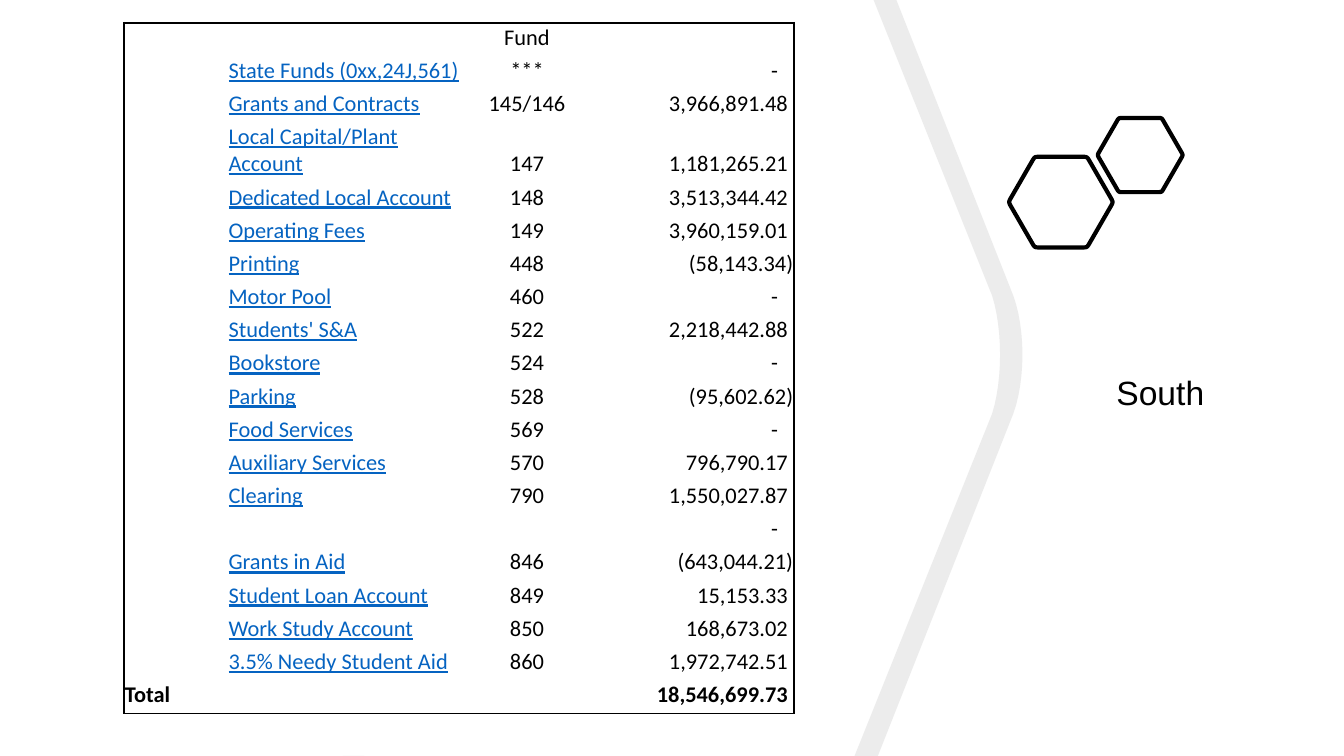
from math import cos, pi, sin

from lxml import etree
from pptx import Presentation
from pptx.dml.color import RGBColor
from pptx.enum.text import MSO_ANCHOR, PP_ALIGN
from pptx.oxml.ns import qn
from pptx.util import Cm, Pt

LEFT, CENTER, RIGHT = PP_ALIGN.LEFT, PP_ALIGN.CENTER, PP_ALIGN.RIGHT
BOTTOM = MSO_ANCHOR.BOTTOM
BLACK, LINK, GREY = "000000", "0563C1", "808080"
NO_STYLE = "{2D5ABB26-0587-4C30-8999-92F81FD0307C}"

# Content: label, fund, amount
HEADER = ("", "", "Fund", "")
FUNDS = [
    ("State Funds (0xx,24J,561)", "***", "-"),
    ("Grants and Contracts", "145/146", "3,966,891.48"),
    ("Local Capital/Plant Account", "147", "1,181,265.21"),
    ("Dedicated Local Account", "148", "3,513,344.42"),
    ("Operating Fees", "149", "3,960,159.01"),
    ("Printing", "448", "(58,143.34)"),
    ("Motor Pool", "460", "-"),
    ("Students' S&A", "522", "2,218,442.88"),
    ("Bookstore", "524", "-"),
    ("Parking", "528", "(95,602.62)"),
    ("Food Services", "569", "-"),
    ("Auxiliary Services", "570", "796,790.17"),
    ("Clearing", "790", "1,550,027.87"),
    ("", "", "-"),
    ("Grants in Aid", "846", "(643,044.21)"),
    ("Student Loan Account", "849", "15,153.33"),
    ("Work Study Account", "850", "168,673.02"),
    ("3.5% Needy Student Aid", "860", "1,972,742.51"),
]
TOTAL = ("Total", "", "", "18,546,699.73")
ROWS = [HEADER] + [("",) + fund for fund in FUNDS] + [TOTAL]
CAMPUS = "South"

# Layout in centimetres
WIDTH, HEIGHT = 25.4, 14.29
COLS = (1.96, 4.72, 1.88, 4.11)
ALIGNS = (LEFT, LEFT, CENTER, RIGHT)
ROW_H = 0.53
HEXAGONS = [(20.05, 3.82, 0.99), (21.55, 2.93, 0.81)]  # centre x, y, radius


def rgb(value):
    return RGBColor.from_string(value)


def style(p, size, name, color, bold=False, underline=False):
    f = p.font
    f.size, f.name, f.bold, f.underline = Pt(size), name, bold, underline
    f.color.rgb = rgb(color)


def bezier(p0, p1, p2, p3, steps=12):
    """Points along a cubic curve."""
    points = []
    for i in range(steps + 1):
        t = i / steps
        weights = ((1 - t) ** 3, 3 * t * (1 - t) ** 2, 3 * t * t * (1 - t), t ** 3)
        points.append(tuple(sum(w * q[k] for w, q in zip(weights, (p0, p1, p2, p3)))
                            for k in (0, 1)))
    return points


def freeform(s, *outlines):
    outlines = [[(Cm(x), Cm(y)) for x, y in points] for points in outlines]
    builder = s.shapes.build_freeform(*outlines[0][0], scale=1.0)
    for i, points in enumerate(outlines):
        if i:
            builder.move_to(*points[0])
        builder.add_line_segments(points[1:], close=True)
    sp = builder.convert_to_shape()
    sp.shadow.inherit = False
    return sp


def add_band(s):
    outer = bezier((19.15, 5.59), (19.38, 6.22), (19.38, 7.19), (19.15, 7.82))
    inner = bezier((18.75, 7.82), (18.95, 7.19), (18.95, 6.22), (18.75, 5.59))
    arrow = [(16.51, 0), (16.94, 0), *outer, (16.59, HEIGHT), (16.15, HEIGHT), *inner]
    sp = freeform(s, arrow, [(6.48, HEIGHT), (6.88, HEIGHT)])
    sp.fill.solid()
    sp.fill.fore_color.rgb = rgb(GREY)
    color = sp.fill._xPr.find(".//" + qn("a:srgbClr"))
    etree.SubElement(color, qn("a:alpha"), val="15000")
    sp.line.fill.background()


def add_hexagon(s, cx, cy, radius, cut=0.1):
    corners = [(cx + radius * cos(i * pi / 3), cy + radius * sin(i * pi / 3))
               for i in range(6)]
    points = []
    for i, corner in enumerate(corners):
        start, end = (tuple(c + cut * (n - c) for c, n in zip(corner, near))
                      for near in (corners[i - 1], corners[(i + 1) % 6]))
        points += bezier(start, corner, corner, end, 6)
    sp = freeform(s, points)
    sp.fill.background()
    sp.line.color.rgb = rgb(BLACK)
    sp.line.width = Pt(2.25)


def set_borders(cell, drawn):
    tc_pr = cell._tc.get_or_add_tcPr()
    for side in "LRTB":
        ln = etree.SubElement(tc_pr, qn("a:ln" + side), w=str(Pt(1)))
        if side in drawn:
            fill = etree.SubElement(ln, qn("a:solidFill"))
            etree.SubElement(fill, qn("a:srgbClr"), val=BLACK)
        else:
            etree.SubElement(ln, qn("a:noFill"))


def amount_inset(text):
    """Align digits left of the closing bracket, dashes further in."""
    if text == "-":
        return 0.31
    return 0.02 if text.endswith(")") else 0.12


def add_fund_table(s):
    last_row, last_col = len(ROWS) - 1, len(COLS) - 1
    frame = s.shapes.add_table(len(ROWS), len(COLS), Cm(2.34), Cm(0.43),
                               Cm(sum(COLS)), Cm(ROW_H * len(ROWS)))
    table = frame.table
    table.first_row = table.horz_banding = False
    table._tbl.tblPr.find(qn("a:tableStyleId")).text = NO_STYLE
    for column, width in zip(table.columns, COLS):
        column.width = Cm(width)
    for r, row in enumerate(ROWS):
        table.rows[r].height = Cm(ROW_H)
        for c, text in enumerate(row):
            cell = table.cell(r, c)
            edges = {"L": c == 0, "R": c == last_col, "T": r == 0, "B": r == last_row}
            set_borders(cell, [side for side, on in edges.items() if on])
            cell.fill.background()
            cell.vertical_anchor = BOTTOM
            cell.margin_left = cell.margin_top = Cm(0.02)
            cell.margin_bottom = Cm(0.09)
            cell.margin_right = Cm(amount_inset(text) if c == last_col and text else 0.02)
            p = cell.text_frame.paragraphs[0]
            p.alignment = ALIGNS[c]
            if text:
                p.text = text
                style(p, 12, "Calibri", LINK if c == 1 else BLACK,
                      bold=r == last_row, underline=c == 1)
            else:  # keeps empty cells from stretching the row
                etree.SubElement(p._p, qn("a:endParaRPr"), sz="1200")


def add_campus(s):
    tf = s.shapes.add_textbox(Cm(20.85), Cm(6.91), Cm(3.33), Cm(1.02)).text_frame
    tf.word_wrap = True
    p = tf.paragraphs[0]
    p.text = CAMPUS
    style(p, 18, "Arial", BLACK)


def main():
    prs = Presentation()
    prs.slide_width, prs.slide_height = Cm(WIDTH), Cm(HEIGHT)
    s = prs.slides.add_slide(prs.slide_layouts[6])
    add_band(s)
    for hexagon in HEXAGONS:
        add_hexagon(s, *hexagon)
    add_fund_table(s)
    add_campus(s)
    prs.save("out.pptx")


if __name__ == "__main__":
    main()
